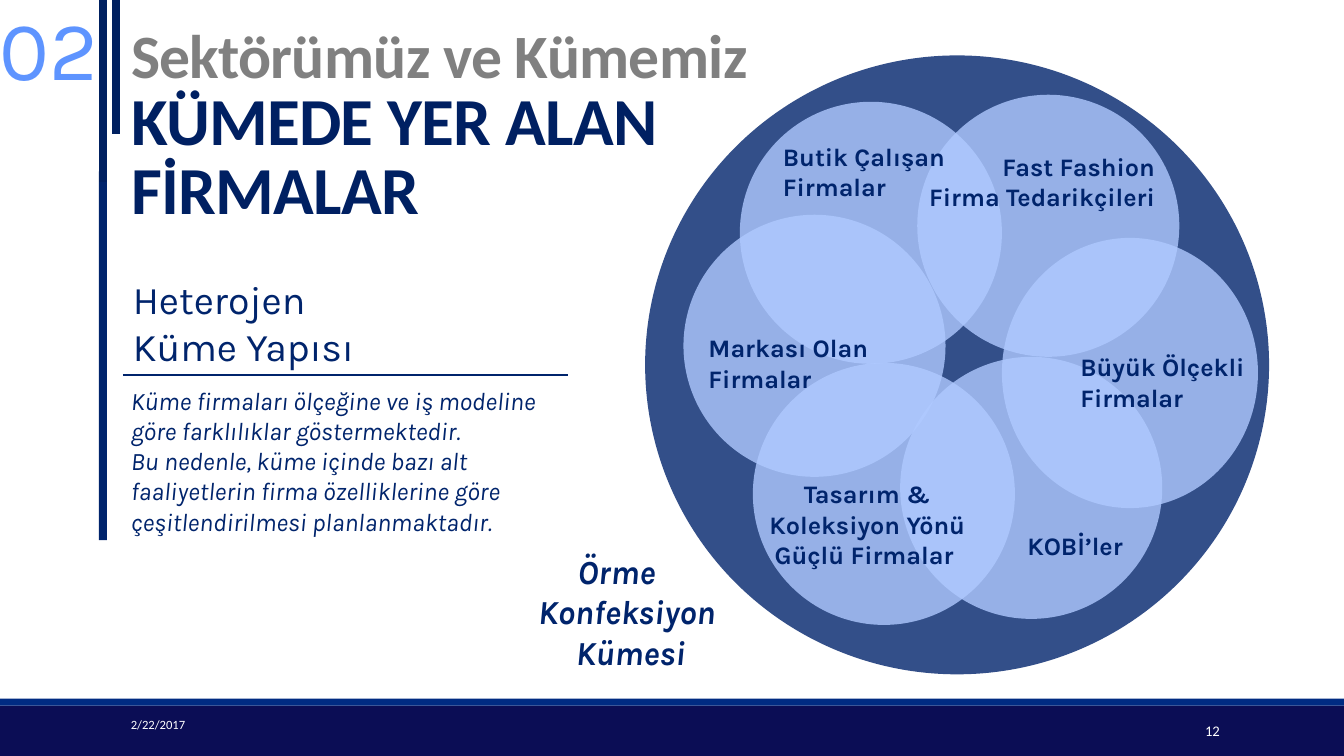
from lxml.etree import SubElement
from pptx import Presentation
from pptx.dml.color import RGBColor
from pptx.enum.shapes import MSO_CONNECTOR, MSO_SHAPE
from pptx.enum.text import MSO_ANCHOR, MSO_AUTO_SIZE, PP_ALIGN
from pptx.oxml.ns import qn
from pptx.util import Pt

COLORS = {
    "navy": "00246C", "title": "002062", "grey": "808080", "sky": "5E94FF",
    "petal": "AFC9FF", "rule": "002060", "footer": "0B0D55", "stripe": "002B82",
    "white": "FFFFFF",
}
ALIGN = {"left": PP_ALIGN.LEFT, "center": PP_ALIGN.CENTER, "right": PP_ALIGN.RIGHT}

TITLE_BOX = (86.4, 1.4, 792, 164.9)
TITLE_LINES = [
    ("Sektörümüz ve Kümemiz ", 44, "grey"),
    ("KÜMEDE YER ALAN ", 48, "title"),
    ("FİRMALAR", 48, "title"),
]

BARS = [
    ((0, 504, 960, 36), "footer"),
    ((0, 499, 960, 5), "stripe"),
    ((70.6, 122.4, 5.8, 263.5), "navy"),
]
RULES = [
    ((82.8, 0, 82.8, 95.8), "rule", 6),
    ((73.4, 0, 73.4, 130.3), "rule", 6),
    ((87.8, 267.8, 405.4, 267.8), "navy", 1),
]

CLUSTER = (460.8, 39.6, 445.7, 442.1)
PETAL_SIZE = (187.2, 187.2)
LARGE_PETAL_SIZE = (182.9, 193)
PETALS = [
    (488.2, 153.4, PETAL_SIZE),
    (528.5, 72.7, PETAL_SIZE),
    (643, 254.9, PETAL_SIZE),
    (715.7, 169.9, LARGE_PETAL_SIZE),
    (655.2, 67.7, PETAL_SIZE),
    (537.8, 259.2, PETAL_SIZE),
]

FIRM = {"size": 18, "bold": True}
NOTE = {"size": 18, "italic": True}
NAME = {"size": 24, "bold": True, "italic": True}
DATE = {"size": 9, "name": "Calibri", "color": "white"}
PAGE = {"size": 10.5, "name": "Calibri", "color": "white"}
TOP, MIDDLE = MSO_ANCHOR.TOP, MSO_ANCHOR.MIDDLE
TEXTS = [
    ((86.4, 503.3, 194.4, 28.8), ["2/22/2017"], "left", MIDDLE, DATE),
    ((775.4, 507.6, 103, 28.8), ["12"], "right", MIDDLE, PAGE),
    ((-14.4, -5.8, 91.4, 79.9), ["02"], "right", TOP, {"size": 60, "color": "sky"}),
    ((87.8, 193, 330.5, 74.9), ["Heterojen", "Küme Yapısı"], "left", TOP, {"size": 28}),
    ((86.4, 271.4, 331.9, 116.6), [
        "Küme firmaları ölçeğine ve iş modeline göre farklılıklar göstermektedir.",
        "Bu nedenle, küme içinde bazı alt faaliyetlerin firma özelliklerine göre "
        "çeşitlendirilmesi planlanmaktadır.",
    ], "left", TOP, NOTE),
    ((717.1, 375.1, 96.5, 28.8), ["KOBİ’ler "], "right", TOP, FIRM),
    ((552.2, 97.2, 139.7, 51.1), ["Butik Çalışan Firmalar"], "left", TOP, FIRM),
    ((649.4, 104.4, 187.2, 51.1), ["Fast Fashion ", "Firma Tedarikçileri "], "right", TOP, FIRM),
    ((499, 234, 169.9, 51.1), ["Markası Olan Firmalar"], "left", TOP, FIRM),
    ((523.4, 338.4, 192.2, 72.7),
     ["Tasarım &", "Koleksiyon Yönü Güçlü Firmalar "], "center", TOP, FIRM),
    ((764.6, 247.7, 169.9, 51.1), ["Büyük Ölçekli Firmalar"], "left", TOP, FIRM),
    ((357.9, 390.2, 164.9, 31), ["Örme"], "center", TOP, NAME),
    ((367.9, 418.9, 164.9, 65.6), ["Konfeksiyon ", "Kümesi"], "center", TOP, NAME),
]


def points(values):
    return [Pt(value) for value in values]


def rgb(name):
    return RGBColor.from_string(COLORS[name])


def format_font(font, style):
    values = {"name": "Karla", "color": "navy", **style}
    font.color.rgb = rgb(values.pop("color"))
    values["size"] = Pt(values["size"])
    for attribute, value in values.items():
        setattr(font, attribute, value)


def add_filled(slide, kind, box, color, opacity=100):
    shape = slide.shapes.add_shape(kind, *points(box))
    shape.shadow.inherit = False
    shape.fill.solid()
    shape.fill.fore_color.rgb = rgb(color)
    shape.line.fill.background()
    if opacity < 100:
        fill_color = shape.fill._xPr.find(".//" + qn("a:srgbClr"))
        SubElement(fill_color, qn("a:alpha"), val=str(opacity * 1000))


def add_rule(slide, ends, color, width):
    connector = slide.shapes.add_connector(MSO_CONNECTOR.STRAIGHT, *points(ends))
    connector.line.color.rgb = rgb(color)
    connector.line.width = Pt(width)
    SubElement(connector._element.spPr, qn("a:effectLst"))


def add_text(slide, box, lines, align, anchor, style):
    frame = slide.shapes.add_textbox(*points(box)).text_frame
    frame.word_wrap = True
    frame.vertical_anchor = anchor
    frame.text = "\n".join(lines)
    for paragraph in frame.paragraphs:
        paragraph.alignment = ALIGN[align]
        for run in paragraph.runs:
            format_font(run.font, style)


def fill_title(title):
    title.left, title.top, title.width, title.height = points(TITLE_BOX)
    frame = title.text_frame
    frame.word_wrap = True
    frame.auto_size = MSO_AUTO_SIZE.NONE
    frame.vertical_anchor = MSO_ANCHOR.BOTTOM
    paragraph = frame.paragraphs[0]
    paragraph.alignment = PP_ALIGN.LEFT
    paragraph.line_spacing = 0.85
    paragraph.space_before = Pt(0)
    for index, (text, size, color) in enumerate(TITLE_LINES):
        if index:
            paragraph.add_line_break()
        run = paragraph.add_run()
        run.text = text
        format_font(run.font, {"name": "Calibri", "size": size, "color": color, "bold": True})
        run.font._element.set("spc", "-50")


def main():
    presentation = Presentation()
    presentation.slide_width, presentation.slide_height = Pt(960), Pt(540)
    slide = presentation.slides.add_slide(presentation.slide_layouts[5])
    fill_title(slide.shapes.title)
    for box, color in BARS:
        add_filled(slide, MSO_SHAPE.RECTANGLE, box, color)
    for ends, color, width in RULES:
        add_rule(slide, ends, color, width)
    add_filled(slide, MSO_SHAPE.OVAL, CLUSTER, "navy", 80)
    for left, top, size in PETALS:
        add_filled(slide, MSO_SHAPE.OVAL, (left, top, *size), "petal", 80)
    for text in TEXTS:
        add_text(slide, *text)
    presentation.save("out.pptx")


if __name__ == "__main__":
    main()
